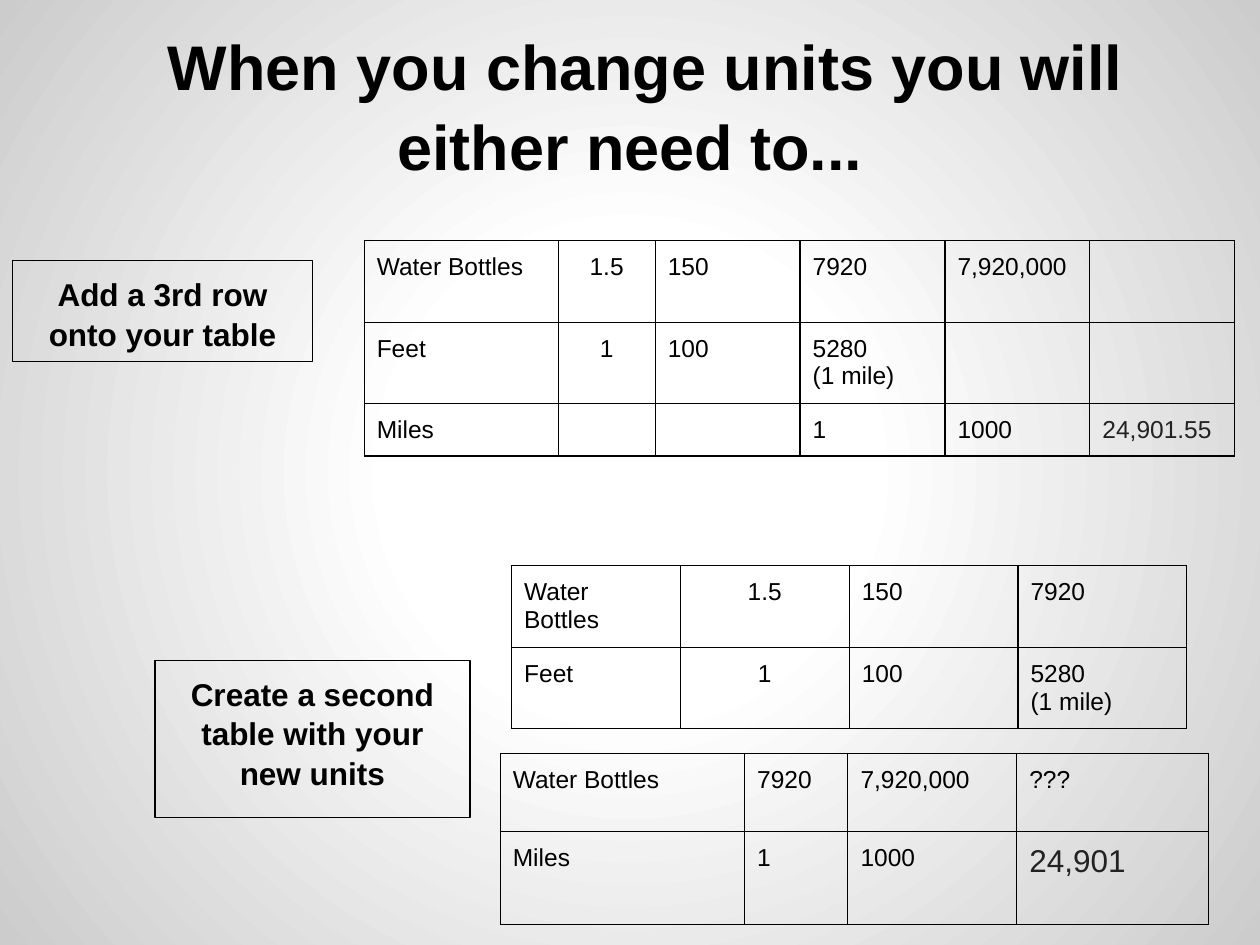
from lxml import etree
from pptx import Presentation
from pptx.dml.color import RGBColor
from pptx.enum import shapes, text
from pptx.oxml import ns
from pptx.util import Inches, Pt

COLORS = {"ink": "000000", "gray": "222222", "light": "FFFFFF", "edge": "CCCCCC"}
CENTER = text.PP_ALIGN.CENTER


def format_text(tf, size, color="ink", bold=False, align=None, spacing=None):
    tf.margin_left = tf.margin_right = tf.margin_top = tf.margin_bottom = Inches(0.1)
    tf.word_wrap = True
    for p in tf.paragraphs:
        p.alignment = align
        p.line_spacing = spacing
        for r in p.runs:
            r.font.name = "Arial"
            r.font.size = Pt(size)
            r.font.bold = bold
            r.font.color.rgb = RGBColor.from_string(COLORS[color])


def add_borders(cell):
    tcPr = cell._tc.get_or_add_tcPr()
    for i, side in enumerate(("lnL", "lnR", "lnT", "lnB")):
        ln = etree.Element(ns.qn(f"a:{side}"), w=str(Pt(0.75)))
        fill = etree.SubElement(ln, ns.qn("a:solidFill"))
        etree.SubElement(fill, ns.qn("a:srgbClr"), val=COLORS["ink"])
        tcPr.insert(i, ln)


prs = Presentation()
prs.slide_width, prs.slide_height = Inches(10), Inches(7.5)
s = prs.slides.add_slide(prs.slide_layouts[5])

s.background.fill.gradient()
grad = s.background._cSld.find(".//" + ns.qn("a:gradFill"))
for child in list(grad):
    grad.remove(child)
stops = etree.SubElement(grad, ns.qn("a:gsLst"))
for pos, color in ((0, "light"), (30, "light"), (100, "edge")):
    gs = etree.SubElement(stops, ns.qn("a:gs"), pos=str(pos * 1000))
    etree.SubElement(gs, ns.qn("a:srgbClr"), val=COLORS[color])
circle = etree.SubElement(grad, ns.qn("a:path"), path="circle")
etree.SubElement(circle, ns.qn("a:fillToRect"), l="50000", t="50000", r="50000", b="50000")

title = s.shapes.title
title.left, title.top, title.width, title.height = map(Inches, (0.5, 0.3, 9, 1.25))
tf = title.text_frame
tf.text = "When you change units you will either need to..."
tf.vertical_anchor = text.MSO_ANCHOR.BOTTOM
tf.auto_size = text.MSO_AUTO_SIZE.NONE
format_text(tf, 36, bold=True, align=CENTER, spacing=1.05)
pPr = tf.paragraphs[0]._p.get_or_add_pPr()
pPr.set("marL", "0")
pPr.set("indent", str(Inches(0.25)))

tables = [
    (4.06, 4.49, [1.34] * 4, [0.65, 0.64], [
        ["Water Bottles", "1.5", "150", "7920"],
        ["Feet", "1", "100", "5280\n(1 mile)"]]),
    (3.97, 5.98, [1.94, 0.82, 1.34, 1.52], [0.62, 0.74], [
        ["Water Bottles", "7920", "7,920,000", "???"],
        ["Miles", "1", "1000", "24,901"]]),
    (2.89, 1.91, [1.54, 0.77] + [1.15] * 4, [0.65, 0.64, 0.42], [
        ["Water Bottles", "1.5", "150", "7920", "7,920,000", ""],
        ["Feet", "1", "100", "5280\n(1 mile)", "", ""],
        ["Miles", "", "", "1", "1000", "24,901.55"]]),
]
special = {"24,901": (18, "gray"), "24,901.55": (14, "gray")}
for left, top, widths, heights, rows in tables:
    frame = s.shapes.add_table(len(rows), len(widths), Inches(left), Inches(top),
                               Inches(sum(widths)), Inches(sum(heights)))
    table = frame.table
    table.first_row = table.horz_banding = False
    for col, width in zip(table.columns, widths):
        col.width = Inches(width)
    for row, height, values in zip(table.rows, heights, rows):
        row.height = Inches(height)
        for i, (cell, value) in enumerate(zip(row.cells, values)):
            cell.fill.background()
            add_borders(cell)
            if value:
                cell.text_frame.text = value
                cell.margin_left = cell.margin_right = Inches(0.1)
                cell.margin_top = cell.margin_bottom = Inches(0.1)
                size, color = special.get(value, (14, "ink"))
                centered = i == 1 and rows[0][1] == "1.5"
                format_text(cell.text_frame, size, color, align=CENTER if centered else None)

boxes = [
    (0.1, 2.07, 2.38, 0.8, "Add a 3rd row onto your table"),
    (1.23, 5.24, 2.5, 1.25, "Create a second table with your new units"),
]
for left, top, width, height, label in boxes:
    sp = s.shapes.add_shape(shapes.MSO_SHAPE.RECTANGLE, Inches(left), Inches(top),
                            Inches(width), Inches(height))
    sp.shadow.inherit = False
    sp.fill.background()
    sp.line.color.rgb = RGBColor.from_string(COLORS["ink"])
    sp.line.width = Pt(0.75)
    sp.text_frame.text = label
    sp.text_frame.vertical_anchor = text.MSO_ANCHOR.TOP
    format_text(sp.text_frame, 18, bold=True, align=CENTER, spacing=1.05)

prs.save("out.pptx")
